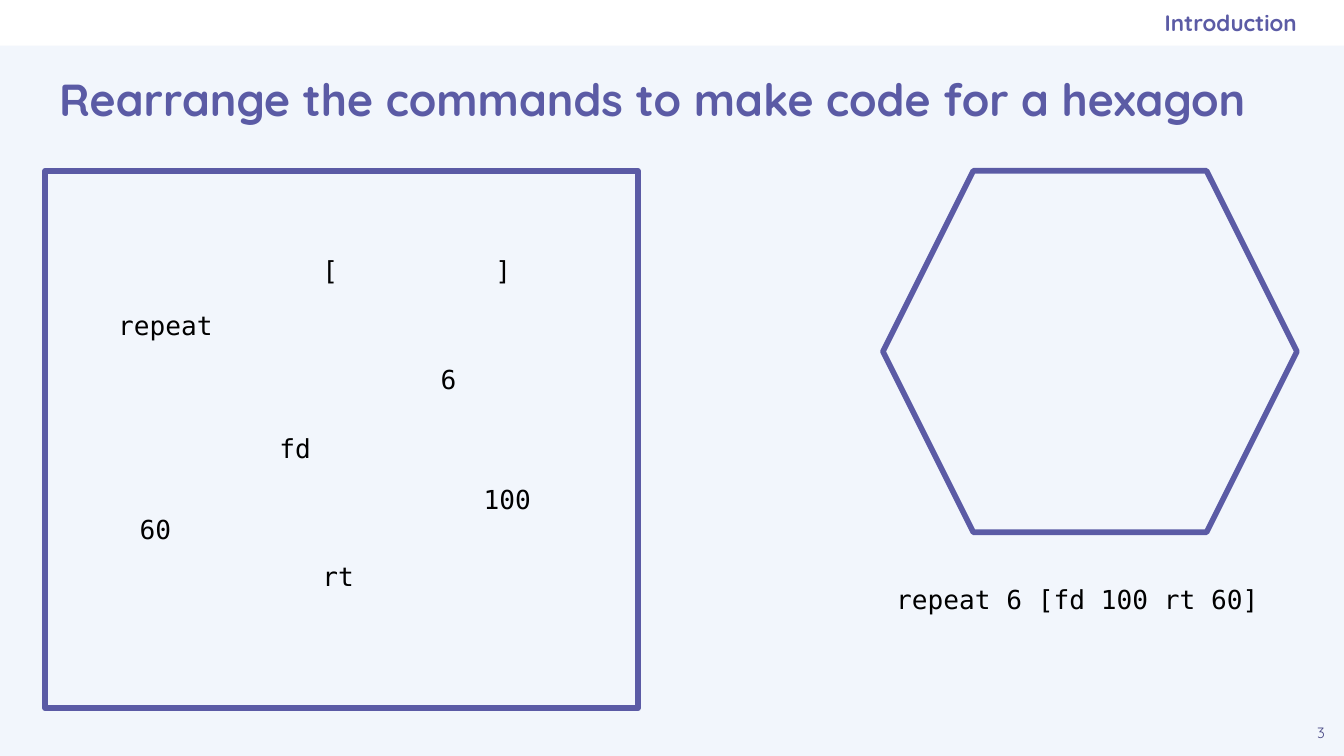
from dataclasses import dataclass

from lxml import etree
from pptx import Presentation
from pptx.dml.color import RGBColor
from pptx.enum.shapes import MSO_SHAPE
from pptx.enum.text import MSO_ANCHOR, MSO_AUTO_SIZE, PP_ALIGN
from pptx.oxml.ns import qn
from pptx.util import Pt

RECTANGLE, HEXAGON = MSO_SHAPE.RECTANGLE, MSO_SHAPE.HEXAGON
TOP, MIDDLE = MSO_ANCHOR.TOP, MSO_ANCHOR.MIDDLE
LEFT, CENTER, RIGHT = PP_ALIGN.LEFT, PP_ALIGN.CENTER, PP_ALIGN.RIGHT
TITLE_SLIDE_LAYOUT = 0


@dataclass(frozen=True)
class Theme:
    background: RGBColor = RGBColor(0xF2, 0xF6, 0xFC)
    bar: RGBColor = RGBColor(0xFF, 0xFF, 0xFF)
    accent: RGBColor = RGBColor(0x5B, 0x5B, 0xA5)
    number: RGBColor = RGBColor(0x49, 0x49, 0x85)
    code: RGBColor = RGBColor(0, 0, 0)
    heading_font: str = "Quicksand"
    code_font: str = "DejaVu Sans Mono"
    title_size: int = 24
    section_size: int = 12
    code_size: int = 14
    number_size: int = 8
    outline: int = 3
    inset: float = 7.2


THEME = Theme()

# Command pieces to rearrange: text, left, top, width
COMMANDS = [
    ("[", 165.6, 128.9, 40),
    ("]", 258.3, 128.9, 40),
    ("repeat", 56.2, 158.4, 67.7),
    ("6", 229, 187.2, 38.9),
    ("fd", 142.6, 224.6, 86.4),
    ("100", 252, 252, 56.2),
    ("60", 67.7, 267.8, 45.4),
    ("rt", 165.6, 293, 38.9),
]
CODE_HEIGHT = 37.4


def place(shape, left, top, width, height):
    shape.left, shape.top = Pt(left), Pt(top)
    shape.width, shape.height = Pt(width), Pt(height)


def write(shape, text, font_name, size, color, bold=False,
          align=LEFT, anchor=TOP, right_inset=THEME.inset):
    frame = shape.text_frame
    frame.text = text
    frame.word_wrap = True
    frame.auto_size = MSO_AUTO_SIZE.NONE
    frame.vertical_anchor = anchor
    frame.margin_left = frame.margin_top = frame.margin_bottom = Pt(THEME.inset)
    frame.margin_right = Pt(right_inset)
    paragraph = frame.paragraphs[0]
    paragraph.alignment = align
    paragraph.space_before = Pt(0)
    font = paragraph.runs[0].font
    font.name, font.size, font.bold = font_name, Pt(size), bold
    font.color.rgb = color


def add_code(slide, text, left, top, width):
    box = slide.shapes.add_textbox(Pt(left), Pt(top), Pt(width), Pt(CODE_HEIGHT))
    write(box, text, THEME.code_font, THEME.code_size, THEME.code)


def add_figure(slide, kind, left, top, width, height, fill=None, outlined=True):
    shape = slide.shapes.add_shape(kind, Pt(left), Pt(top), Pt(width), Pt(height))
    shape.shadow.inherit = False
    if fill is None:
        shape.fill.background()
    else:
        shape.fill.solid()
        shape.fill.fore_color.rgb = fill
    if outlined:
        shape.line.color.rgb = THEME.accent
        shape.line.width = Pt(THEME.outline)
        # Round the corners of the outline
        etree.SubElement(shape.line._get_or_add_ln(), qn("a:round"))
    else:
        shape.line.fill.background()
    return shape


def add_headings(slide):
    title, section = slide.shapes.title, slide.placeholders[1]
    place(title, 24.5, 25.2, 671, 54.7)
    write(title, "Rearrange the commands to make code for a hexagon",
          THEME.heading_font, THEME.title_size, THEME.accent,
          bold=True, anchor=MIDDLE)
    place(section, 414, 0, 280.8, 24.5)
    write(section, "Introduction", THEME.heading_font, THEME.section_size,
          THEME.accent, bold=True, align=RIGHT, anchor=MIDDLE, right_inset=0)


def add_slide_number(slide, number):
    box = slide.shapes.add_textbox(Pt(695.5), Pt(380.2), Pt(24.5), Pt(24.5))
    write(box, str(number), THEME.heading_font, THEME.number_size,
          THEME.number, align=CENTER)


def main():
    presentation = Presentation()
    presentation.slide_width, presentation.slide_height = Pt(720), Pt(405)
    layout = presentation.slide_layouts[TITLE_SLIDE_LAYOUT]
    slide = presentation.slides.add_slide(layout)
    slide.background.fill.solid()
    slide.background.fill.fore_color.rgb = THEME.background

    # Top bar, moved behind the headings
    bar = add_figure(slide, RECTANGLE, 0, 0, 720, 24.5, THEME.bar, outlined=False)
    slide.shapes._spTree.insert(2, bar._element)
    add_headings(slide)
    add_slide_number(slide, 3)

    # Frame with the scattered commands
    add_figure(slide, RECTANGLE, 24.2, 91.5, 317.5, 288)
    for command in COMMANDS:
        add_code(slide, *command)

    # Hexagon and the finished code
    hexagon = add_figure(slide, HEXAGON, 473, 91.5, 221.8, 193.7, THEME.background)
    hexagon.adjustments[0] = 0.25
    add_code(slide, "repeat 6 [fd 100 rt 60]", 473, 305.3, 221.8)

    presentation.save("out.pptx")


if __name__ == "__main__":
    main()
